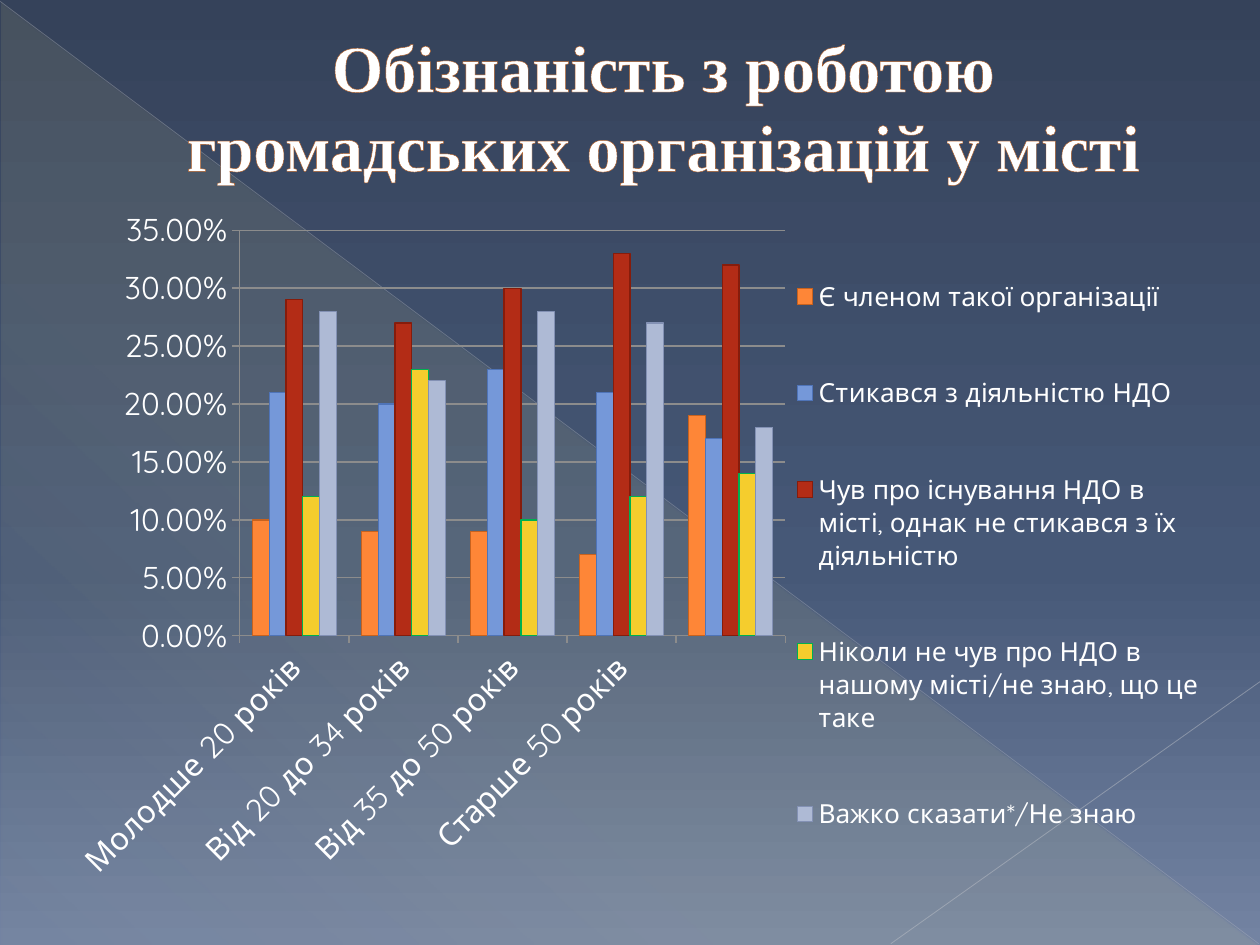
from dataclasses import dataclass

import pptx
import pptx.chart.data
import pptx.dml.color
import pptx.enum.chart
import pptx.enum.shapes
import pptx.enum.text
import pptx.oxml
import pptx.oxml.ns
import pptx.util
from lxml import etree
from pptx.util import Inches

qn = pptx.oxml.ns.qn


@dataclass(frozen=True)
class Theme:
    text: str = "FFFFFF"
    title_outline: str = "B05D26"
    axis: str = "8C8C8C"
    heading_font: str = "Times New Roman"
    body_font: str = "Quicksand"
    title_size: float = 37.8
    axis_size: float = 18
    legend_size: float = 15


@dataclass(frozen=True)
class Stop:
    position: int
    color: str
    opacity: int = 100


@dataclass(frozen=True)
class Ray:
    start: tuple[float, float]
    end: tuple[float, float]
    color: str
    width: float
    opacity: int


@dataclass(frozen=True)
class Answer:
    name: str
    shares: tuple[float, ...]
    fill: str
    outline: str


@dataclass(frozen=True)
class Area:
    """Part of the chart, as fractions of its size."""
    x: float
    y: float
    w: float
    h: float


THEME = Theme()
BACKGROUND = [Stop(0, "35425A"), Stop(60, "465877"), Stop(100, "7383A2")]
GLOW = [Stop(0, "FFF39D", 10), Stop(70, "FFF39D", 8), Stop(100, "FFF39D", 1)]
RAYS = [
    Ray((0, 0.01), (9.99, 7.49), "BABDC4", 0.39, 35),
    Ray((10, 5.41), (7.07, 7.49), "C1C4CA", 0.47, 45),
]
PLOT_AREA = Area(0.16, 0.05, 0.47, 0.58)
LEGEND_AREA = Area(0.65, 0.03, 0.35, 0.97)
# The fifth age group has no label.
AGE_GROUPS = ["Молодше 20 років", "Від 20 до 34 років", "Від 35 до 50 років", "Старше 50 років", ""]
ANSWERS = [
    Answer("Є членом такої організації", (0.1, 0.09, 0.09, 0.07, 0.19), "FE8637", "C8621E"),
    Answer("Стикався з діяльністю НДО", (0.21, 0.2, 0.23, 0.21, 0.17), "7598D9", "4F74B8"),
    Answer("Чув про існування НДО в місті, однак не стикався з їх діяльністю",
           (0.29, 0.27, 0.3, 0.33, 0.32), "B32C16", "861C0B"),
    Answer("Ніколи не чув про НДО в нашому місті/не знаю, що це таке",
           (0.12, 0.23, 0.1, 0.12, 0.14), "F5CD2D", "00B050"),
    Answer("Важко сказати*/Не знаю", (0.28, 0.22, 0.28, 0.27, 0.18), "AEBAD5", "8391B4"),
]


def rgb(color: str) -> pptx.dml.color.RGBColor:
    return pptx.dml.color.RGBColor.from_string(color)


def add_opacity(color_element, percent: int) -> None:
    etree.SubElement(color_element, qn("a:alpha")).set("val", str(percent * 1000))


def set_gradient(fill, owner, stops: list[Stop], angle: int) -> None:
    """Fill with the stops; the angle runs clockwise in degrees."""
    fill.gradient()
    stop_list = owner.find(".//" + qn("a:gsLst"))
    for old_stop in list(stop_list):
        stop_list.remove(old_stop)
    for stop in stops:
        stop_element = etree.SubElement(stop_list, qn("a:gs"), pos=str(stop.position * 1000))
        color = etree.SubElement(stop_element, qn("a:srgbClr"), val=stop.color)
        add_opacity(color, stop.opacity)
    fill.gradient_angle = 360 - angle


def add_glow(slide) -> None:
    triangle = slide.shapes.add_shape(
        pptx.enum.shapes.MSO_SHAPE.RIGHT_TRIANGLE,
        Inches(0.01), Inches(0.02), Inches(9.98), Inches(7.48))
    triangle.shadow.inherit = False
    set_gradient(triangle.fill, triangle.element, GLOW, 133)
    triangle.line.fill.background()


def add_ray(slide, ray: Ray) -> None:
    connector = slide.shapes.add_connector(
        pptx.enum.shapes.MSO_CONNECTOR.STRAIGHT,
        *(Inches(value) for value in ray.start + ray.end))
    connector.line.color.rgb = rgb(ray.color)
    connector.line.width = pptx.util.Pt(ray.width)
    add_opacity(connector.element.find(".//" + qn("a:srgbClr")), ray.opacity)
    etree.SubElement(connector.element.spPr, qn("a:effectLst"))


def add_title(slide, text: str) -> None:
    title = slide.shapes.add_textbox(Inches(0.5), Inches(0.29), Inches(9), Inches(1.09))
    frame = title.text_frame
    frame.word_wrap = True
    frame.vertical_anchor = pptx.enum.text.MSO_ANCHOR.MIDDLE
    frame.text = text
    paragraph = frame.paragraphs[0]
    paragraph.alignment = pptx.enum.text.PP_ALIGN.CENTER
    paragraph._p.get_or_add_pPr().set("marL", str(Inches(0.53)))
    run = paragraph.runs[0]
    style_font(run.font, THEME.title_size, THEME.heading_font)
    run.font.bold = True
    outline = pptx.oxml.parse_xml(
        f'<a:ln {pptx.oxml.ns.nsdecls("a")} w="6350"><a:solidFill>'
        f'<a:srgbClr val="{THEME.title_outline}"/></a:solidFill></a:ln>')
    run._r.get_or_add_rPr().insert(0, outline)


def style_font(font, size: float, name: str) -> None:
    font.size = pptx.util.Pt(size)
    font.name = name
    font.color.rgb = rgb(THEME.text)


def style_line(line, color: str) -> None:
    line.color.rgb = rgb(color)
    line.width = pptx.util.Pt(0.75)


def place(element, area: Area, index: int, inner: bool = False) -> None:
    """Give a plot area or legend element a fixed layout at a child index."""
    for old_layout in element.findall(qn("c:layout")):
        element.remove(old_layout)
    layout = etree.Element(qn("c:layout"))
    element.insert(index, layout)
    manual = etree.SubElement(layout, qn("c:manualLayout"))
    settings = [("layoutTarget", "inner")] if inner else []
    settings += [("xMode", "edge"), ("yMode", "edge")]
    settings += [(side, str(getattr(area, side))) for side in "xywh"]
    for tag, value in settings:
        etree.SubElement(manual, qn(f"c:{tag}"), val=value)


def style_axes(chart) -> None:
    for axis in (chart.category_axis, chart.value_axis):
        axis.major_tick_mark = pptx.enum.chart.XL_TICK_MARK.OUTSIDE
        style_line(axis.format.line, THEME.axis)
        style_font(axis.tick_labels.font, THEME.axis_size, THEME.body_font)
    category_text = chart.category_axis._element.find(qn("c:txPr")).find(qn("a:bodyPr"))
    category_text.set("rot", str(-45 * 60000))
    value_axis = chart.value_axis
    value_axis.minimum_scale, value_axis.maximum_scale, value_axis.major_unit = 0, 0.35, 0.05
    value_axis.has_major_gridlines = True
    style_line(value_axis.major_gridlines.format.line, THEME.axis)
    value_axis.tick_labels.number_format = "0.00%"
    value_axis.tick_labels.number_format_is_linked = False


def add_awareness_chart(slide) -> None:
    data = pptx.chart.data.CategoryChartData(number_format="0.00%")
    data.categories = AGE_GROUPS
    for answer in ANSWERS:
        data.add_series(answer.name, answer.shares)
    chart = slide.shapes.add_chart(
        pptx.enum.chart.XL_CHART_TYPE.COLUMN_CLUSTERED,
        Inches(0.43), Inches(1.55), Inches(9.21), Inches(5.55), data).chart
    chart.has_title = False
    style_font(chart.font, THEME.axis_size, THEME.body_font)
    chart.has_legend = True
    chart.legend.position = pptx.enum.chart.XL_LEGEND_POSITION.RIGHT
    chart.legend.include_in_layout = False
    style_font(chart.legend.font, THEME.legend_size, THEME.body_font)
    place(chart.legend._element, LEGEND_AREA, 1)
    place(chart.element.find(".//" + qn("c:plotArea")), PLOT_AREA, 0, inner=True)
    plot = chart.plots[0]
    plot.gap_width = 150
    plot.overlap = 0
    plot.vary_by_categories = False
    for series, answer in zip(plot.series, ANSWERS):
        series.format.fill.solid()
        series.format.fill.fore_color.rgb = rgb(answer.fill)
        style_line(series.format.line, answer.outline)
    style_axes(chart)


def main() -> None:
    presentation = pptx.Presentation()
    presentation.slide_width, presentation.slide_height = Inches(10), Inches(7.5)
    slide = presentation.slides.add_slide(presentation.slide_layouts[6])
    set_gradient(slide.background.fill, slide.element, BACKGROUND, 90)
    add_glow(slide)
    for ray in RAYS:
        add_ray(slide, ray)
    add_title(slide, "Обізнаність з роботою громадських організацій у місті")
    add_awareness_chart(slide)
    presentation.save("out.pptx")


if __name__ == "__main__":
    main()
